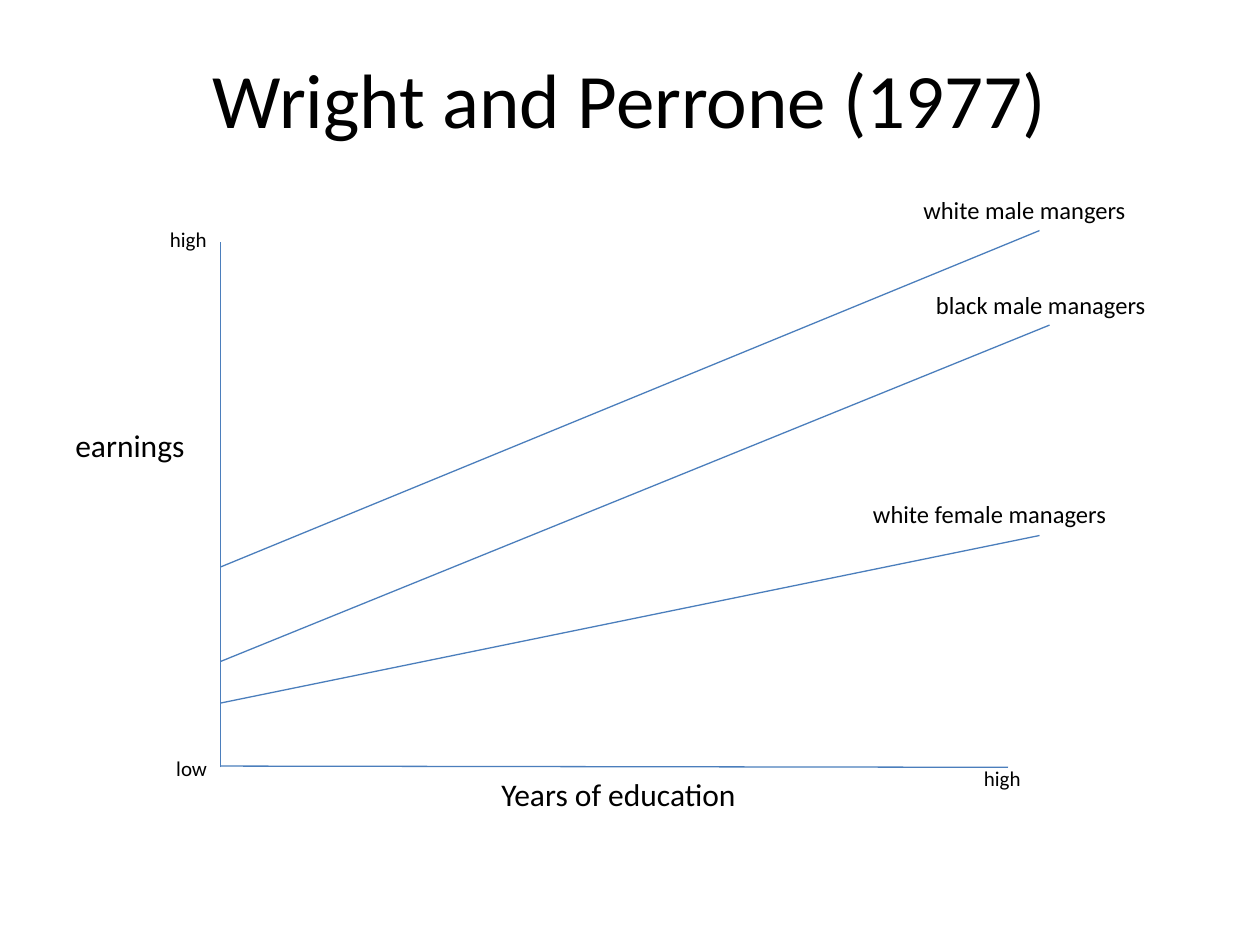
"""Build a slide of earnings against years of education for three groups of managers."""
import pptx
import pptx.dml.color
import pptx.enum.shapes
import pptx.enum.text
import pptx.oxml.xmlchemy
import pptx.util
from pptx.util import Inches

BLACK = pptx.dml.color.RGBColor(0x00, 0x00, 0x00)
BLUE = pptx.dml.color.RGBColor(0x4B, 0x7E, 0xBC)
FONT = "Calibri"
TITLE = "Wright and Perrone (1977)"

AXIS_LEFT = 1.75
AXES = [
    ((AXIS_LEFT, 6.09), (AXIS_LEFT, 1.92)),
    ((AXIS_LEFT, 6.08), (8, 6.09)),
]
TRENDS = [
    (5.58, (8.25, 4.25)),
    (5.25, (8.33, 2.58)),
    (4.5, (8.25, 1.83)),
]
LABELS = [
    ("earnings", 18, False, (0.5, 3.33, 1.17, 0.4)),
    ("Years of education", 18, False, (3.88, 6.1, 2.28, 0.4)),
    ("white female managers", 14, True, (6.83, 3.91, 2.25, 0.34)),
    ("black male managers", 14, True, (7.33, 2.25, 2.17, 0.33)),
    ("white male mangers", 14, False, (7.23, 1.5, 1.94, 0.33)),
    ("low", 12, False, (1.3, 5.95, 0.45, 0.3)),
    ("high", 12, False, (1.25, 1.75, 0.52, 0.3)),
    ("high", 12, False, (7.71, 6.03, 0.52, 0.3)),
]


def add_text(paragraph, text, size):
    run = paragraph.add_run()
    run.text = text
    run.font.name = FONT
    run.font.size = pptx.util.Pt(size)
    run.font.color.rgb = BLACK


def add_title(slide):
    title = slide.shapes.title
    title.left, title.top = Inches(0.5), Inches(0.3)
    title.width, title.height = Inches(9), Inches(0.95)
    title.text_frame.vertical_anchor = pptx.enum.text.MSO_ANCHOR.MIDDLE
    paragraph = title.text_frame.paragraphs[0]
    paragraph.alignment = pptx.enum.text.PP_ALIGN.CENTER
    add_text(paragraph, TITLE, 44)


def add_line(slide, start, end):
    points = [Inches(value) for value in (*start, *end)]
    line = slide.shapes.add_connector(pptx.enum.shapes.MSO_CONNECTOR.STRAIGHT, *points)
    line.line.color.rgb = BLUE
    line.line.width = pptx.util.Pt(0.75)
    properties = line._element.spPr
    properties.append(pptx.oxml.xmlchemy.OxmlElement("a:effectLst"))


def add_label(slide, text, size, wrap, box):
    label = slide.shapes.add_textbox(*(Inches(value) for value in box))
    frame = label.text_frame
    frame.word_wrap = wrap
    frame.auto_size = pptx.enum.text.MSO_AUTO_SIZE.SHAPE_TO_FIT_TEXT
    add_text(frame.paragraphs[0], text, size)


def main():
    presentation = pptx.Presentation()
    presentation.slide_width, presentation.slide_height = Inches(10), Inches(7.5)
    slide = presentation.slides.add_slide(presentation.slide_layouts[5])
    add_title(slide)
    for start, end in AXES:
        add_line(slide, start, end)
    for intercept, end in TRENDS:
        add_line(slide, (AXIS_LEFT, intercept), end)
    for label in LABELS:
        add_label(slide, *label)
    presentation.save("out.pptx")


if __name__ == "__main__":
    main()
